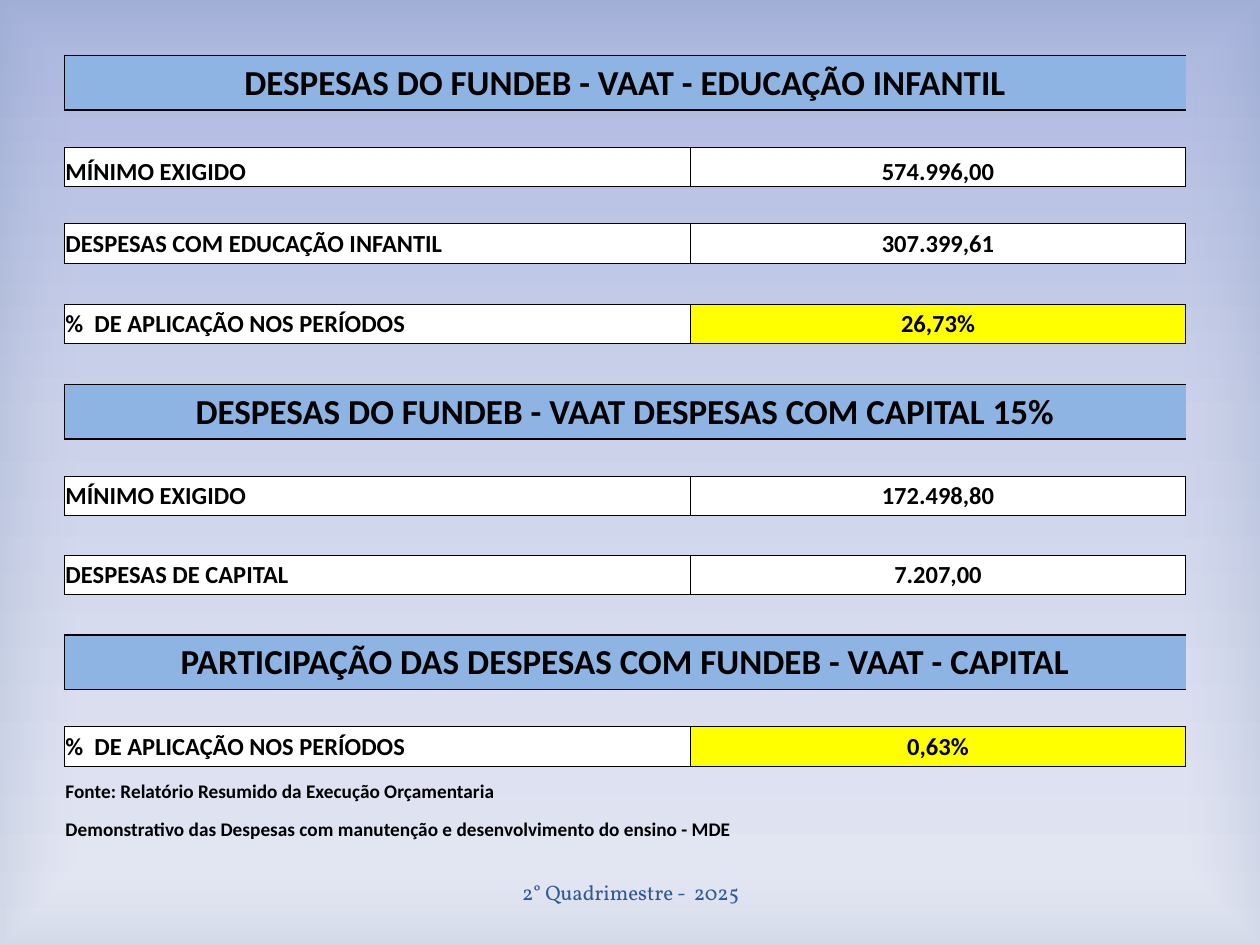
from lxml import etree
from pptx import Presentation
from pptx.dml.color import RGBColor
from pptx.enum.shapes import MSO_SHAPE
from pptx.enum.text import MSO_ANCHOR, PP_ALIGN
from pptx.oxml.ns import qn
from pptx.util import Cm, Pt

RECTANGLE = MSO_SHAPE.RECTANGLE
MIDDLE, BOTTOM = MSO_ANCHOR.MIDDLE, MSO_ANCHOR.BOTTOM
LEFT, CENTER = PP_ALIGN.LEFT, PP_ALIGN.CENTER

BLACK = RGBColor(0x00, 0x00, 0x00)
WHITE = RGBColor(0xFF, 0xFF, 0xFF)
YELLOW = RGBColor(0xFF, 0xFF, 0x00)
BANNER_BLUE = RGBColor(0x8D, 0xB4, 0xE2)
FOOTER_BLUE = RGBColor(0x2F, 0x58, 0x97)
SKY_TOP = RGBColor(0xA2, 0xAE, 0xDC)
SKY_MIDDLE = RGBColor(0xC6, 0xCD, 0xE8)
SKY_BOTTOM = RGBColor(0xE3, 0xE6, 0xF3)
EDGE_BLUE = RGBColor(0x9B, 0xAD, 0xC4)

NO_STYLE = "{2D5ABB26-0587-4C30-8999-92F81FD0307C}"
COLUMNS = (12.62, 9.98)
BANNER, DATA, GAP, NOTE = "banner", "data", "gap", "note"
ROWS = [
    (BANNER, 1.1, "DESPESAS DO FUNDEB - VAAT - EDUCAÇÃO INFANTIL"),
    (GAP, 0.75),
    (DATA, 0.79, "MÍNIMO EXIGIDO", "574.996,00", WHITE, BOTTOM),
    (GAP, 0.75),
    (DATA, 0.79, "DESPESAS COM EDUCAÇÃO INFANTIL", "307.399,61", WHITE, MIDDLE),
    (GAP, 0.83),
    (DATA, 0.79, "%  DE APLICAÇÃO NOS PERÍODOS", "26,73%", YELLOW, MIDDLE),
    (GAP, 0.83),
    (BANNER, 1.1, "DESPESAS DO FUNDEB - VAAT DESPESAS COM CAPITAL 15%"),
    (GAP, 0.75),
    (DATA, 0.79, "MÍNIMO EXIGIDO", "172.498,80", WHITE, MIDDLE),
    (GAP, 0.8),
    (DATA, 0.79, "DESPESAS DE CAPITAL", "7.207,00", WHITE, MIDDLE),
    (GAP, 0.82),
    (BANNER, 1.1, "PARTICIPAÇÃO DAS DESPESAS COM FUNDEB - VAAT - CAPITAL"),
    (GAP, 0.75),
    (DATA, 0.79, "%  DE APLICAÇÃO NOS PERÍODOS", "0,63%", YELLOW, MIDDLE),
    (NOTE, 0.76, "Fonte: Relatório Resumido da Execução Orçamentaria"),
    (NOTE, 0.76, "Demonstrativo das Despesas com manutenção e desenvolvimento do ensino - MDE"),
]


def add_solid(parent, color, alpha=100):
    clr = etree.SubElement(parent, qn("a:srgbClr"), val=str(color))
    if alpha < 100:
        etree.SubElement(clr, qn("a:alpha"), val=str(alpha * 1000))


def set_gradient(grad, stops):
    for child in list(grad):
        grad.remove(child)
    gs_list = etree.SubElement(grad, qn("a:gsLst"))
    for position, color, alpha in stops:
        add_solid(etree.SubElement(gs_list, qn("a:gs"), pos=str(position * 1000)), color, alpha)


def add_background(s):
    s.background.fill.gradient()
    grad = s._element.find(".//" + qn("a:gradFill"))
    set_gradient(grad, [(0, SKY_TOP, 100), (45, SKY_MIDDLE, 100), (100, SKY_BOTTOM, 100)])
    etree.SubElement(grad, qn("a:lin"), ang="5400000", scaled="0")


def add_vignette(s, width, height):
    sp = s.shapes.add_shape(RECTANGLE, 0, 0, width, height)
    sp.shadow.inherit = False
    sp.line.fill.background()
    sp.fill.gradient()
    grad = sp._element.spPr.find(qn("a:gradFill"))
    set_gradient(grad, [(83, WHITE, 11), (100, EDGE_BLUE, 23)])
    route = etree.SubElement(grad, qn("a:path"), path="rect")
    etree.SubElement(route, qn("a:fillToRect"), l="50000", t="50000", r="50000", b="50000")


def set_borders(cell, sides, width):
    tc_pr = cell._tc.get_or_add_tcPr()
    for side in sides:
        ln = etree.SubElement(tc_pr, qn("a:ln" + side), w=str(Pt(width)))
        add_solid(etree.SubElement(ln, qn("a:solidFill")), BLACK)


def format_text(tf, text, size, font, color, align, bold=False):
    tf.text = text
    p = tf.paragraphs[0]
    p.alignment = align
    r = p.runs[0]
    r.font.size = Pt(size)
    r.font.name = font
    r.font.bold = bold
    r.font.color.rgb = color


def set_cell(cell, text, size, align=LEFT, anchor=MIDDLE, color=None):
    cell.vertical_anchor = anchor
    format_text(cell.text_frame, text, size, "Calibri", BLACK, align, True)
    if color is not None:
        cell.fill.solid()
        cell.fill.fore_color.rgb = color


def fill_row(left, right, kind, content):
    for cell in (left, right):
        cell.margin_left = cell.margin_right = cell.margin_top = Cm(0.02)
        cell.margin_bottom = 0
        cell.text_frame.paragraphs[0]._p.get_or_add_endParaRPr().set("sz", "1000")
    if kind == BANNER:
        set_borders(left, "LTB", 1)
        set_borders(right, "TB", 1)
        left.merge(right)
        set_cell(left, content[0], 20, CENTER, color=BANNER_BLUE)
    elif kind == DATA:
        label, value, color, anchor = content
        for cell in (left, right):
            set_borders(cell, "LRTB", 0.5)
        set_cell(left, label, 14, LEFT, anchor, WHITE)
        set_cell(right, value, 14, CENTER, anchor, color)
    elif kind == NOTE:
        left.merge(right)
        set_cell(left, content[0], 11, LEFT, BOTTOM)


def add_expense_table(s):
    heights = [row[1] for row in ROWS]
    frame = s.shapes.add_table(len(ROWS), len(COLUMNS), Cm(1.3), Cm(1.12),
                               Cm(sum(COLUMNS)), Cm(sum(heights)))
    table = frame.table
    table.first_row = table.horz_banding = False
    table._tbl.tblPr.find(qn("a:tableStyleId")).text = NO_STYLE
    for column, width in zip(table.columns, COLUMNS):
        column.width = Cm(width)
    for i, (kind, height, *content) in enumerate(ROWS):
        table.rows[i].height = Cm(height)
        fill_row(table.cell(i, 0), table.cell(i, 1), kind, content)


def add_footer(s):
    tf = s.shapes.add_textbox(Cm(8.69), Cm(17.48), Cm(8.05), Cm(1.02)).text_frame
    tf.word_wrap = True
    tf.vertical_anchor = MIDDLE
    format_text(tf, "2° Quadrimestre -  2025", 12, "Vollkorn", FOOTER_BLUE, CENTER)


def main():
    prs = Presentation()
    prs.slide_width, prs.slide_height = Cm(25.4), Cm(19.05)
    s = prs.slides.add_slide(prs.slide_layouts[6])
    add_background(s)
    add_vignette(s, prs.slide_width, prs.slide_height)
    add_footer(s)
    add_expense_table(s)
    prs.save("out.pptx")


if __name__ == "__main__":
    main()
